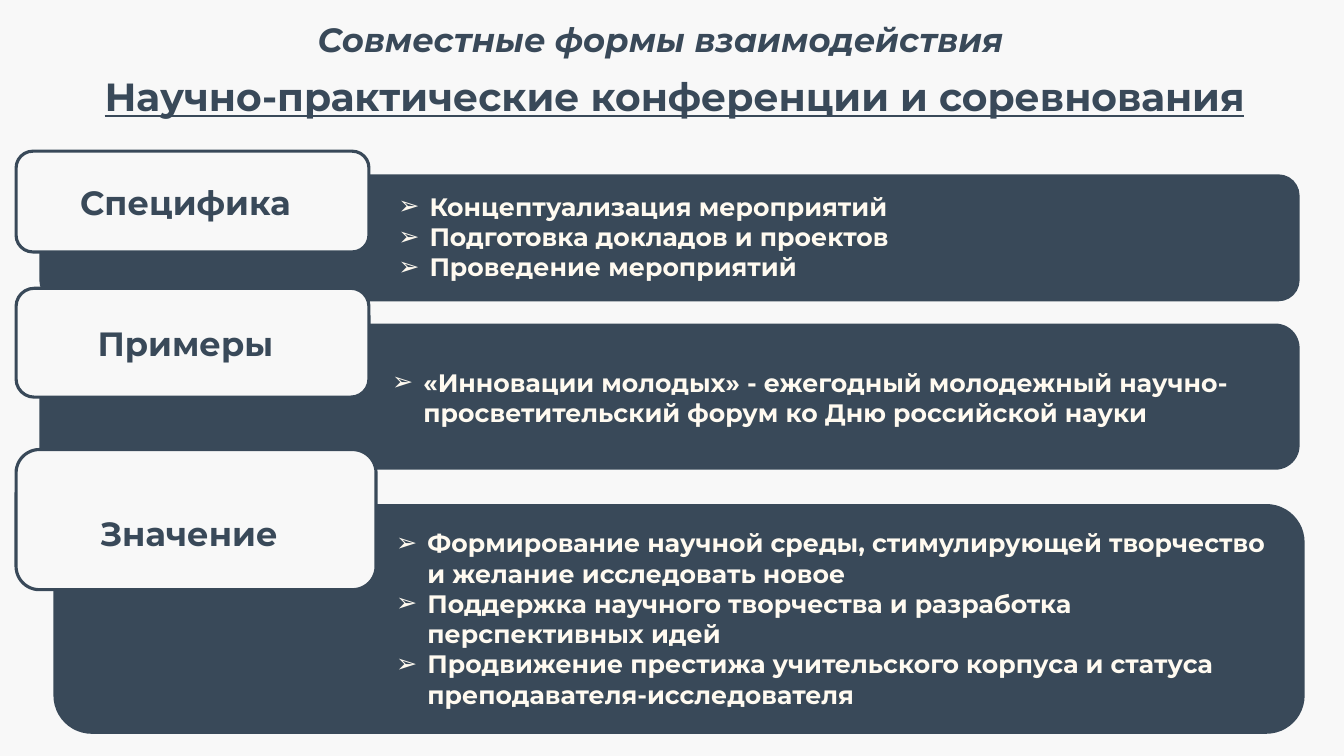
"""Build a slide on joint forms of work: conferences and competitions."""
from dataclasses import dataclass

from lxml import etree
from pptx import Presentation
from pptx.dml.color import RGBColor
from pptx.enum.shapes import MSO_SHAPE
from pptx.enum.text import MSO_ANCHOR, MSO_AUTO_SIZE, PP_ALIGN
from pptx.oxml.ns import qn
from pptx.util import Inches, Pt

ROUNDED = MSO_SHAPE.ROUNDED_RECTANGLE
MIDDLE = MSO_ANCHOR.MIDDLE
NO_AUTOFIT = MSO_AUTO_SIZE.NONE
CENTER = PP_ALIGN.CENTER
LEFT = PP_ALIGN.LEFT
COMPARISON_LAYOUT = 4


@dataclass(frozen=True)
class Theme:
    font: str = "Montserrat"
    background: RGBColor = RGBColor(0xF8, 0xF8, 0xF8)
    dark: RGBColor = RGBColor(0x39, 0x49, 0x59)
    light: RGBColor = RGBColor(0xFF, 0xFA, 0xF0)
    title_size: int = 28
    label_size: int = 24
    list_size: int = 18
    border: float = 2.25
    bullet: str = "➢"
    bullet_indent: float = 0.31


THEME = Theme()

TITLE = "Научно-практические конференции и соревнования"
SUBTITLE = "Совместные формы взаимодействия"

SECTIONS = [
    {
        "label": "Специфика",
        "panel": (0.39, 1.73, 12.5, 1.26),
        "card": (0.16, 1.5, 3.5, 1),
        "list": (3.85, 1.84, 8.95, 1.01),
        "label_drop": 0,
        "items": [
            "Концептуализация мероприятий",
            "Подготовка докладов и проектов",
            "Проведение мероприятий",
        ],
    },
    {
        "label": "Примеры",
        "panel": (0.39, 3.21, 12.5, 1.45),
        "card": (0.16, 2.86, 3.5, 1.08),
        "list": (3.79, 3.59, 9.06, 0.7),
        "label_drop": 0,
        "items": [
            "«Инновации молодых» - ежегодный молодежный "
            "научно-просветительский форум ко Дню российской науки",
        ],
    },
    {
        "label": "Значение",
        "panel": (0.53, 5, 12.41, 2.28),
        "card": (0.16, 4.46, 3.57, 1.39),
        "list": (3.83, 5.18, 8.93, 1.91),
        "label_drop": 0.27,
        "items": [
            "Формирование научной среды, стимулирующей творчество "
            "и желание исследовать новое",
            "Поддержка научного творчества и разработка перспективных идей",
            "Продвижение престижа учительского корпуса и статуса "
            "преподавателя-исследователя",
        ],
    },
]


def place(shape, box):
    """Move and size a shape, with box as left, top, width, height in inches."""
    shape.left, shape.top, shape.width, shape.height = map(Inches, box)


def format_paragraph(paragraph, size, color, alignment, italic=False, underline=False):
    """Set the spacing, alignment and font of a paragraph."""
    paragraph.alignment = alignment
    paragraph.line_spacing = 1.0
    paragraph.space_before = paragraph.space_after = Pt(0)
    font = paragraph.font
    font.name = THEME.font
    font.size = Pt(size)
    font.bold = True
    font.italic = italic
    font.underline = underline
    font.color.rgb = color


def set_bullet(paragraph, character=None):
    """Give a paragraph a hanging bullet, or none."""
    properties = paragraph._p.get_or_add_pPr()
    indent = Inches(THEME.bullet_indent) if character else 0
    properties.set("marL", str(indent))
    properties.set("indent", str(-indent))
    if character:
        etree.SubElement(properties, qn("a:buChar")).set("char", character)
    else:
        etree.SubElement(properties, qn("a:buNone"))


def fill_placeholder(placeholder, box, lines):
    """Place a placeholder in front, write its lines and return the paragraphs."""
    place(placeholder, box)
    element = placeholder.element
    element.getparent().append(element)
    frame = placeholder.text_frame
    frame.text = "\n".join(lines)
    frame.word_wrap = True
    frame.auto_size = NO_AUTOFIT
    frame.vertical_anchor = MIDDLE
    return frame.paragraphs


def add_heading(placeholder, box, text, size, **style):
    """Write a centred heading line."""
    for paragraph in fill_placeholder(placeholder, box, [text]):
        set_bullet(paragraph)
        format_paragraph(paragraph, size, THEME.dark, CENTER, **style)


def add_list(placeholder, box, items):
    """Write a bulleted list."""
    for paragraph in fill_placeholder(placeholder, box, items):
        set_bullet(paragraph, THEME.bullet)
        format_paragraph(paragraph, THEME.list_size, THEME.light, LEFT)


def add_panel(slide, box, color):
    """Add a flat rounded rectangle without an outline."""
    shape = slide.shapes.add_shape(ROUNDED, *map(Inches, box))
    shape.shadow.inherit = False
    shape.fill.solid()
    shape.fill.fore_color.rgb = color
    shape.line.fill.background()
    return shape


def add_card(slide, box, label, label_drop):
    """Add an outlined card with its section label."""
    card = add_panel(slide, box, THEME.background)
    card.line.color.rgb = THEME.dark
    card.line.width = Pt(THEME.border)
    frame = card.text_frame
    frame.text = label
    frame.word_wrap = True
    frame.vertical_anchor = MIDDLE
    frame.margin_right = Inches(0.24)
    frame.margin_top = Inches(0.05 + label_drop)
    format_paragraph(frame.paragraphs[0], THEME.label_size, THEME.dark, CENTER)


def main():
    """Build and save the slide."""
    presentation = Presentation()
    presentation.slide_width = Inches(13.33)
    presentation.slide_height = Inches(7.5)
    slide = presentation.slides.add_slide(presentation.slide_layouts[COMPARISON_LAYOUT])
    slide.background.fill.solid()
    slide.background.fill.fore_color.rgb = THEME.background

    title, subtitle, *lists = list(slide.placeholders)[:5]
    add_heading(subtitle, (0, 0.14, 13.1, 0.5), SUBTITLE, THEME.label_size, italic=True)
    add_heading(title, (0.14, 0.67, 13.1, 0.57), TITLE, THEME.title_size, underline=True)
    for section, placeholder in zip(SECTIONS, lists):
        add_panel(slide, section["panel"], THEME.dark)
        add_card(slide, section["card"], section["label"], section["label_drop"])
        add_list(placeholder, section["list"], section["items"])
    presentation.save("out.pptx")


if __name__ == "__main__":
    main()
